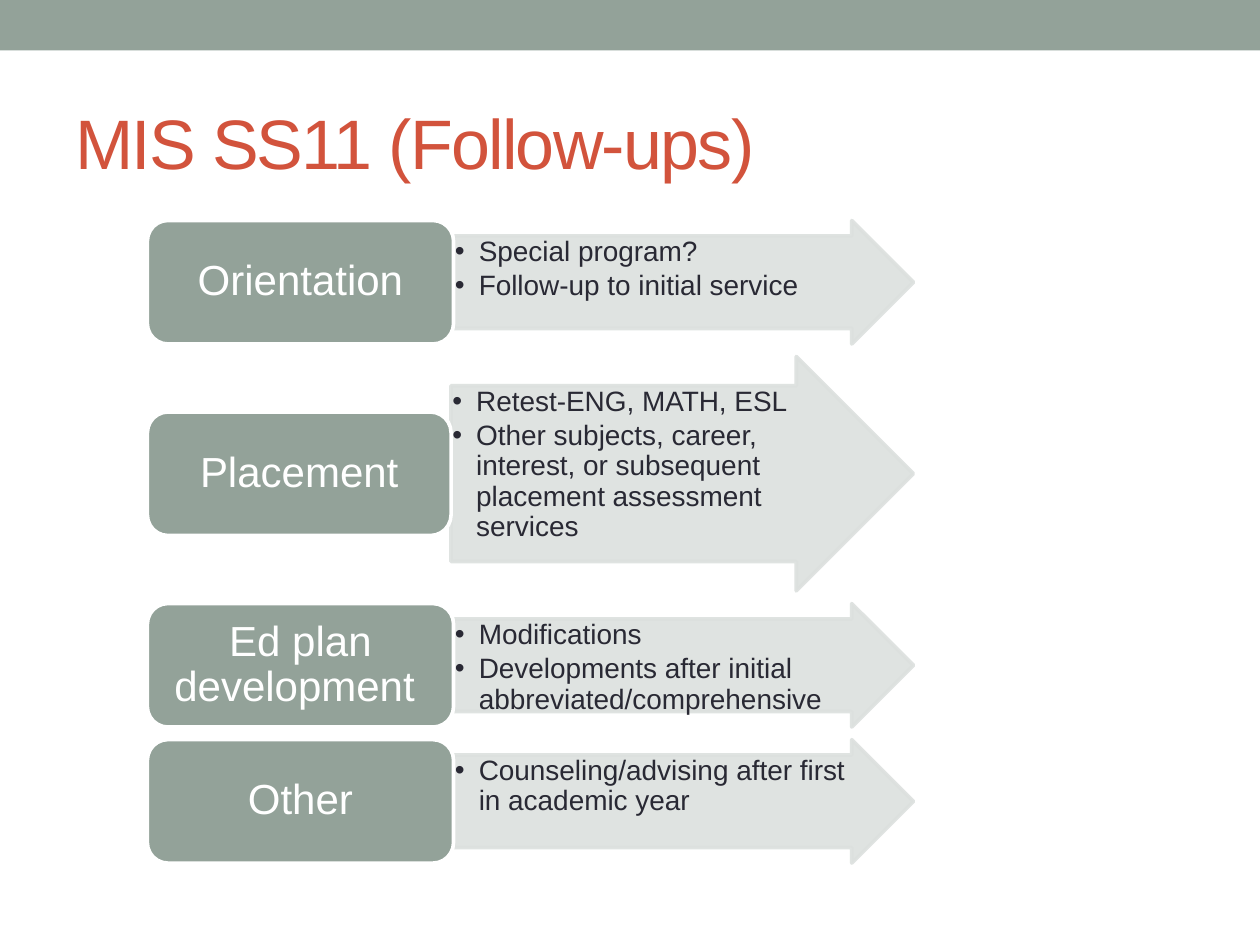
"""Build the MIS SS11 follow-ups slide: four labelled arrows with bullets."""
from lxml import etree
from pptx import Presentation
from pptx.dml.color import RGBColor
from pptx.enum import shapes, text
from pptx.oxml import ns
from pptx.util import Inches, Pt

SAGE = RGBColor(0x93, 0xA2, 0x99)
PALE = RGBColor(0xDC, 0xE0, 0xDE)
RUST = RGBColor(0xD2, 0x53, 0x3C)
INK = RGBColor(0x29, 0x29, 0x34)
WHITE = RGBColor(0xFF, 0xFF, 0xFF)

deck = Presentation()
deck.slide_width, deck.slide_height = Inches(10), Inches(7.5)
page = deck.slides.add_slide(deck.slide_layouts[6])


def add_block(kind, left, top, width, height, color, line=None, alpha=None):
    block = page.shapes.add_shape(
        kind, Inches(left), Inches(top), Inches(width), Inches(height))
    block.shadow.inherit = False
    block.fill.solid()
    block.fill.fore_color.rgb = color
    if line is None:
        block.line.fill.background()
    else:
        block.line.color.rgb = line
        block.line.width = Pt(2.08)
    if alpha:
        for shade in block._element.spPr.iter(ns.qn("a:srgbClr")):
            etree.SubElement(shade, ns.qn("a:alpha"), val=str(alpha * 1000))
    return block


def write(box, lines, size, color, align=text.PP_ALIGN.LEFT,
          anchor=text.MSO_ANCHOR.MIDDLE, leading=0.9, after=0,
          bullet=False, tracking=0):
    frame = box.text_frame
    frame.word_wrap = True
    frame.vertical_anchor = anchor
    for index, line in enumerate(lines):
        para = frame.add_paragraph() if index else frame.paragraphs[0]
        para.alignment = align
        para.line_spacing = leading
        para.space_after = Pt(after)
        if bullet:
            props = para._p.get_or_add_pPr()
            props.set("marL", str(Inches(0.19)))
            props.set("indent", str(Inches(-0.19)))
            etree.SubElement(props, ns.qn("a:buFont"), typeface="Arial")
            etree.SubElement(props, ns.qn("a:buChar"), char="•")
        span = para.add_run()
        span.text = line
        span.font.name = "Arial"
        span.font.size = Pt(size)
        span.font.color.rgb = color
        if tracking:
            span.font._element.set("spc", str(tracking * 100))


add_block(shapes.MSO_SHAPE.RECTANGLE, 0, 0, 10, 0.4, SAGE)
title = page.shapes.add_textbox(Inches(0.5), Inches(0.58), Inches(9), Inches(1.08))
write(title, ["MIS SS11 (Follow-ups)"], 40, RUST, leading=1, tracking=-1)

LABEL_LEFT, LABEL_HEIGHT, ARROW_RIGHT, GAP = 1.17, 0.98, 7.25, 0.1
SHAFT, HEAD = 0.75, 0.5
rows = [
    ("Orientation", 2.43, 0.98,
     ["Special program?", "Follow-up to initial service"]),
    ("Placement", 2.41, 1.86,
     ["Retest-ENG, MATH, ESL",
      "Other subjects, career, interest, or subsequent placement assessment services"]),
    ("Ed plan development ", 2.43, 0.98,
     ["Modifications", "Developments after initial abbreviated/comprehensive"]),
    ("Other", 2.43, 0.98,
     ["Counseling/advising after first in academic year"]),
]

top = 1.75
for name, label_width, height, details in rows:
    left = LABEL_LEFT + label_width
    width = ARROW_RIGHT - left
    arrow = add_block(shapes.MSO_SHAPE.RIGHT_ARROW, left, top, width, height,
                      PALE, line=PALE, alpha=90)
    arrow.adjustments[0], arrow.adjustments[1] = SHAFT, HEAD

    notes = page.shapes.add_textbox(
        Inches(left), Inches(top + height * (1 - SHAFT) / 2),
        Inches(width - height * SHAFT * HEAD), Inches(height * SHAFT))
    frame = notes.text_frame
    frame.margin_left = frame.margin_right = Inches(0.01)
    frame.margin_top = frame.margin_bottom = Inches(0.01)
    write(notes, details, 16, INK, anchor=text.MSO_ANCHOR.TOP,
          after=2.4, bullet=True)

    label = add_block(shapes.MSO_SHAPE.ROUNDED_RECTANGLE, LABEL_LEFT,
                      top + (height - LABEL_HEIGHT) / 2, label_width,
                      LABEL_HEIGHT, SAGE, line=WHITE)
    write(label, [name], 24, WHITE, align=text.PP_ALIGN.CENTER)
    top += height + GAP

deck.save("out.pptx")
